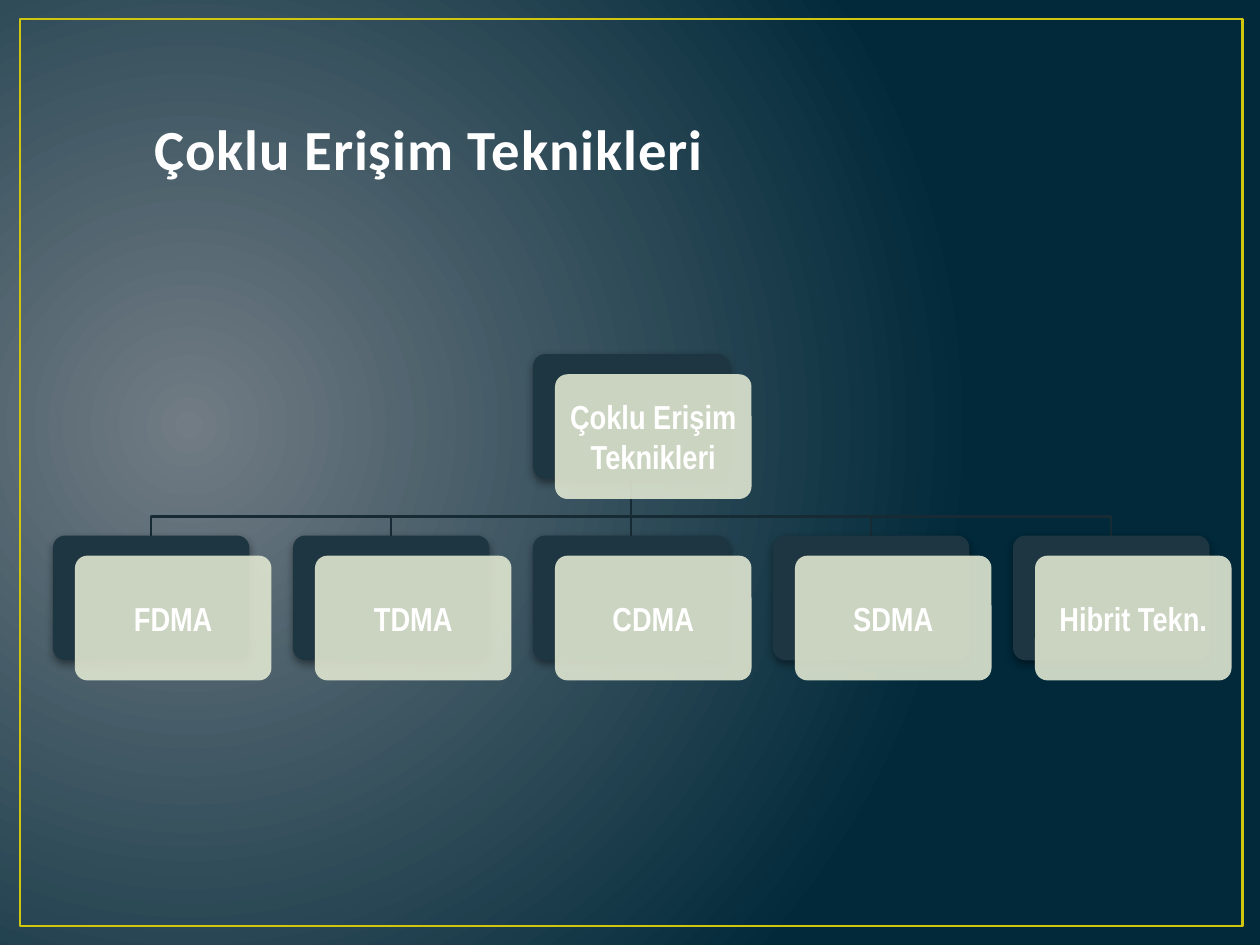
from lxml.etree import SubElement
from pptx import Presentation
from pptx.dml.color import RGBColor
from pptx.enum.shapes import MSO_CONNECTOR, MSO_SHAPE
from pptx.enum.text import MSO_ANCHOR, PP_ALIGN
from pptx.oxml.ns import qn
from pptx.util import Inches, Pt

COLORS = {
    "glow": "717C84",
    "night": "01293A",
    "frame": "CFC60D",
    "title": "FEFEFE",
    "title_outline": "384F55",
    "branch": "172B34",
    "back_card": "1D3641",
    "front_card": "DFE6D0",
    "label": "FFFFFF",
    "shadow": "000000",
}
TECHNIQUES = ["FDMA", "TDMA", "CDMA", "SDMA", "Hibrit Tekn."]
CARD_W, CARD_H = 1.56, 0.99
OFFSET_X, OFFSET_Y = 0.175, 0.16
FIRST_LEFT, CARD_STEP = 0.42, 1.905
ROOT_TOP, CHILD_TOP, BRANCH_Y = 2.81, 4.25, 4.1
MIDDLE = len(TECHNIQUES) // 2


def rgb(name):
    return RGBColor.from_string(COLORS[name])


def add_child(parent, tag, **attributes):
    return SubElement(parent, qn(tag), {key: str(value) for key, value in attributes.items()})


def card_left(index):
    return FIRST_LEFT + index * CARD_STEP


def set_background(slide):
    """Radial gradient glowing from the left of the slide."""
    fill = slide.background.fill
    fill.gradient()
    for stop, name in zip(fill.gradient_stops, ("glow", "night")):
        stop.color.rgb = rgb(name)
    gradient = slide.element.find(".//" + qn("a:gradFill"))
    gradient.remove(gradient.find(qn("a:lin")))
    circle = add_child(gradient, "a:path", path="circle")
    add_child(circle, "a:fillToRect", l=15000, t=50000, r=85000, b=60000)


def add_frame(slide):
    frame = slide.shapes.add_shape(
        MSO_SHAPE.RECTANGLE, Inches(0.16), Inches(0.15), Inches(9.7), Inches(7.2))
    frame.shadow.inherit = False
    frame.fill.background()
    frame.line.color.rgb = rgb("frame")
    frame.line.width = Pt(1.5)


def format_run(run, font_name, size, color):
    run.font.name = font_name
    run.font.size = Pt(size)
    run.font.bold = True
    run.font.color.rgb = rgb(color)


def add_title(slide, text):
    title = slide.shapes.add_textbox(Inches(1.13), Inches(0.83), Inches(7.92), Inches(0.66))
    frame = title.text_frame
    frame.word_wrap = True
    frame.vertical_anchor = MSO_ANCHOR.BOTTOM
    frame.text = text
    run = frame.paragraphs[0].runs[0]
    format_run(run, "Calibri", 32.4, "title")
    properties = run.font._element
    properties.set("spc", "50")
    outline = add_child(properties, "a:ln", w=Pt(1.05))
    add_child(add_child(outline, "a:solidFill"), "a:srgbClr", val=COLORS["title_outline"])
    properties.insert(0, outline)


def style_branch(branch):
    branch.line.color.rgb = rgb("branch")
    branch.line.width = Pt(1.25)


def add_elbow_branch(slide, child_index):
    root_x, child_x = (Inches(card_left(i) + CARD_W / 2) for i in (MIDDLE, child_index))
    builder = slide.shapes.build_freeform(root_x, Inches(ROOT_TOP + CARD_H))
    builder.add_line_segments(
        [(root_x, Inches(BRANCH_Y)), (child_x, Inches(BRANCH_Y)), (child_x, Inches(CHILD_TOP))],
        close=False)
    branch = builder.convert_to_shape()
    branch.shadow.inherit = False
    branch.fill.background()
    style_branch(branch)


def add_straight_branch(slide):
    x = Inches(card_left(MIDDLE) + CARD_W / 2)
    branch = slide.shapes.add_connector(
        MSO_CONNECTOR.STRAIGHT, x, Inches(ROOT_TOP + CARD_H), x, Inches(CHILD_TOP))
    style_branch(branch)
    add_child(branch._element.spPr, "a:effectLst")
    return branch


def add_rounded(slide, left, top, color):
    card = slide.shapes.add_shape(
        MSO_SHAPE.ROUNDED_RECTANGLE, Inches(left), Inches(top), Inches(CARD_W), Inches(CARD_H))
    card.adjustments[0] = 0.1
    card.shadow.inherit = False
    card.fill.solid()
    card.fill.fore_color.rgb = rgb(color)
    card.line.fill.background()
    return card


def add_card(slide, left, top, label):
    """Dark card with a shadow, a pale labelled card over it; returns the dark one."""
    back = add_rounded(slide, left, top, "back_card")
    effects = back._element.spPr.find(qn("a:effectLst"))
    shadow = add_child(effects, "a:outerShdw", blurRad=Pt(5), dist=Pt(2),
                       dir=5400000, rotWithShape=0)
    shade = add_child(shadow, "a:srgbClr", val=COLORS["shadow"])
    add_child(shade, "a:alpha", val=43000)

    front = add_rounded(slide, left + OFFSET_X, top + OFFSET_Y, "front_card")
    add_child(front._element.spPr.find(".//" + qn("a:srgbClr")), "a:alpha", val=90000)
    frame = front.text_frame
    frame.word_wrap = True
    frame.vertical_anchor = MSO_ANCHOR.MIDDLE
    frame.margin_left = frame.margin_right = Inches(0.08)
    frame.margin_top = frame.margin_bottom = Inches(0.08)
    frame.text = label
    paragraph = frame.paragraphs[0]
    paragraph.alignment = PP_ALIGN.CENTER
    format_run(paragraph.runs[0], "Arial Narrow", 19, "label")
    return back


def add_hierarchy(slide, root_label):
    for index in reversed(range(len(TECHNIQUES))):
        if index == MIDDLE:
            trunk = add_straight_branch(slide)
        else:
            add_elbow_branch(slide, index)
    root = add_card(slide, card_left(MIDDLE), ROOT_TOP, root_label)
    children = [add_card(slide, card_left(index), CHILD_TOP, technique)
                for index, technique in enumerate(TECHNIQUES)]
    trunk.begin_connect(root, 2)
    trunk.end_connect(children[MIDDLE], 0)


def main():
    presentation = Presentation()
    presentation.slide_width = Inches(10)
    presentation.slide_height = Inches(7.5)
    slide = presentation.slides.add_slide(presentation.slide_layouts[6])
    heading = "Çoklu Erişim Teknikleri"
    set_background(slide)
    add_frame(slide)
    add_title(slide, heading)
    add_hierarchy(slide, heading)
    presentation.save("out.pptx")


if __name__ == "__main__":
    main()
